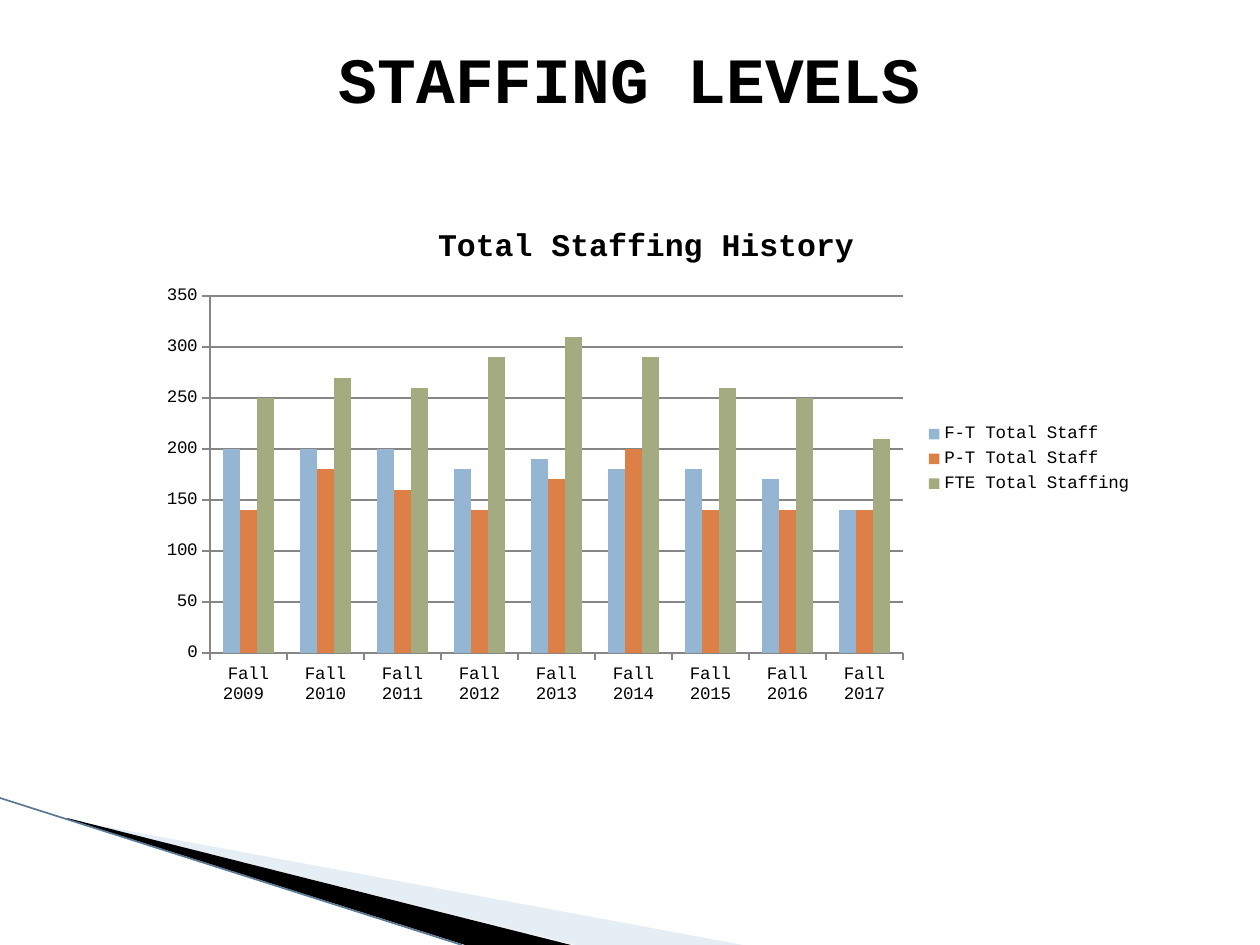
"""Build the staffing levels slide with its history chart."""
from lxml import etree
from pptx import Presentation
from pptx.chart.data import CategoryChartData
from pptx.dml.color import RGBColor
from pptx.enum.chart import XL_CHART_TYPE, XL_LEGEND_POSITION, XL_TICK_MARK
from pptx.enum.shapes import MSO_CONNECTOR
from pptx.enum.text import MSO_ANCHOR, PP_ALIGN
from pptx.oxml import parse_xml
from pptx.oxml.ns import nsdecls, qn
from pptx.util import Pt

COLUMNS = XL_CHART_TYPE.COLUMN_CLUSTERED
LEGEND_RIGHT = XL_LEGEND_POSITION.RIGHT
TICK_OUT = XL_TICK_MARK.OUTSIDE
STRAIGHT = MSO_CONNECTOR.STRAIGHT
TOP = MSO_ANCHOR.TOP
CENTER = PP_ALIGN.CENTER

BLACK = RGBColor(0x00, 0x00, 0x00)
GRID_GRAY = RGBColor(0x86, 0x86, 0x86)
PALE_BLUE = RGBColor(0xC0, 0xD3, 0xE6)
SLATE = RGBColor(0x5B, 0x78, 0x93)
BLUE = RGBColor(0x94, 0xB6, 0xD2)
ORANGE = RGBColor(0xDD, 0x80, 0x47)
GREEN = RGBColor(0xA5, 0xAB, 0x81)

PX = 914400 / 126
FONT = "Courier New"
SLIDE_SIZE = (1260, 945)

HEADING = "STAFFING LEVELS"
HEADING_BOX = (63, 38, 1134, 157)
HEADING_INSET = 1
HEADING_FORMAT = {"name": FONT, "size": Pt(36.9), "bold": True}

CHART_TITLE = "Total Staffing History"
CHART_TITLE_FORMAT = {"name": FONT, "size": Pt(18), "bold": True}
CHART_FORMAT = {"name": FONT, "size": Pt(10)}
CHART_BOX = (147, 204, 998, 510)
PLOT_BOX = (210, 296, 693, 357)
TERMS = ["Fall 2009 "] + [f"Fall {year}" for year in range(2010, 2018)]
STAFFING = [
    ("F-T Total Staff", BLUE, (200, 200, 200, 180, 190, 180, 180, 170, 140)),
    ("P-T Total Staff", ORANGE, (140, 180, 160, 140, 170, 200, 140, 140, 140)),
    ("FTE Total Staffing", GREEN, (250, 270, 260, 290, 310, 290, 260, 250, 210)),
]

WEDGES = [
    (PALE_BLUE, 40, [(69, 820), (743, 945), (575, 945), (69, 819)]),
    (BLACK, 100, [(67, 818), (571, 945), (465, 945), (68, 819)]),
]
EDGE = (0, 798, 462, 945)


def emu(lengths):
    return [round(length * PX) for length in lengths]


def style(font, formats):
    for key, value in formats.items():
        setattr(font, key, value)
    font.color.rgb = BLACK


def add_wedge(slide, color, opacity, points):
    builder = slide.shapes.build_freeform(*points[0], scale=PX)
    builder.add_line_segments(points[1:], close=True)
    wedge = builder.convert_to_shape()
    wedge.shadow.inherit = False
    wedge.fill.solid()
    wedge.fill.fore_color.rgb = color
    wedge.line.fill.background()
    if opacity < 100:
        tint = wedge.fill._xPr.find(".//" + qn("a:srgbClr"))
        etree.SubElement(tint, qn("a:alpha"), val=str(opacity * 1000))


def add_edge(slide):
    edge = slide.shapes.add_connector(STRAIGHT, *emu(EDGE))
    edge.line.color.rgb = SLATE
    edge.line.width = Pt(0.95)
    etree.SubElement(edge._element.spPr, qn("a:effectLst"))


def add_heading(slide):
    frame = slide.shapes.add_textbox(*emu(HEADING_BOX)).text_frame
    frame.word_wrap = True
    frame.vertical_anchor = TOP
    frame.margin_top = round(HEADING_INSET * PX)
    paragraph = frame.paragraphs[0]
    paragraph.text = HEADING
    paragraph.alignment = CENTER
    style(paragraph.runs[0].font, HEADING_FORMAT)


def place_plot(chart):
    left, top, width, height = CHART_BOX
    x, y, w, h = PLOT_BOX
    shares = {"x": (x - left) / width, "y": (y - top) / height,
              "w": w / width, "h": h / height}
    sizes = "".join(f'<c:{key} val="{share:.4f}"/>' for key, share in shares.items())
    layout = parse_xml(
        f'<c:layout {nsdecls("c")}><c:manualLayout><c:layoutTarget val="inner"/>'
        f'<c:xMode val="edge"/><c:yMode val="edge"/>{sizes}'
        '</c:manualLayout></c:layout>')
    plot_area = chart._chartSpace.chart.plotArea
    for automatic in plot_area.findall(qn("c:layout")):
        plot_area.remove(automatic)
    plot_area.insert(0, layout)


def add_staffing_chart(slide):
    data = CategoryChartData()
    data.categories = TERMS
    for name, _, counts in STAFFING:
        data.add_series(name, counts)
    chart = slide.shapes.add_chart(COLUMNS, *emu(CHART_BOX), data).chart
    style(chart.font, CHART_FORMAT)

    chart.has_title = True
    title = chart.chart_title.text_frame
    title.text = CHART_TITLE
    style(title.paragraphs[0].runs[0].font, CHART_TITLE_FORMAT)

    chart.has_legend = True
    chart.legend.position = LEGEND_RIGHT
    chart.legend.include_in_layout = False

    plot = chart.plots[0]
    plot.gap_width = 150
    plot.overlap = 0
    plot.vary_by_categories = False
    for series, (_, color, _) in zip(plot.series, STAFFING):
        series.format.fill.solid()
        series.format.fill.fore_color.rgb = color

    counts_axis = chart.value_axis
    counts_axis.minimum_scale, counts_axis.maximum_scale = 0, 350
    counts_axis.major_unit = 50
    counts_axis.has_major_gridlines = True
    for axis in (chart.category_axis, counts_axis):
        axis.major_tick_mark = TICK_OUT
    for ruled in (chart.category_axis, counts_axis, counts_axis.major_gridlines):
        ruled.format.line.color.rgb = GRID_GRAY
        ruled.format.line.width = Pt(0.9)
    place_plot(chart)


def main():
    deck = Presentation()
    deck.slide_width, deck.slide_height = emu(SLIDE_SIZE)
    slide = deck.slides.add_slide(deck.slide_layouts[6])
    for wedge in WEDGES:
        add_wedge(slide, *wedge)
    add_edge(slide)
    add_heading(slide)
    add_staffing_chart(slide)
    deck.save("out.pptx")


if __name__ == "__main__":
    main()
